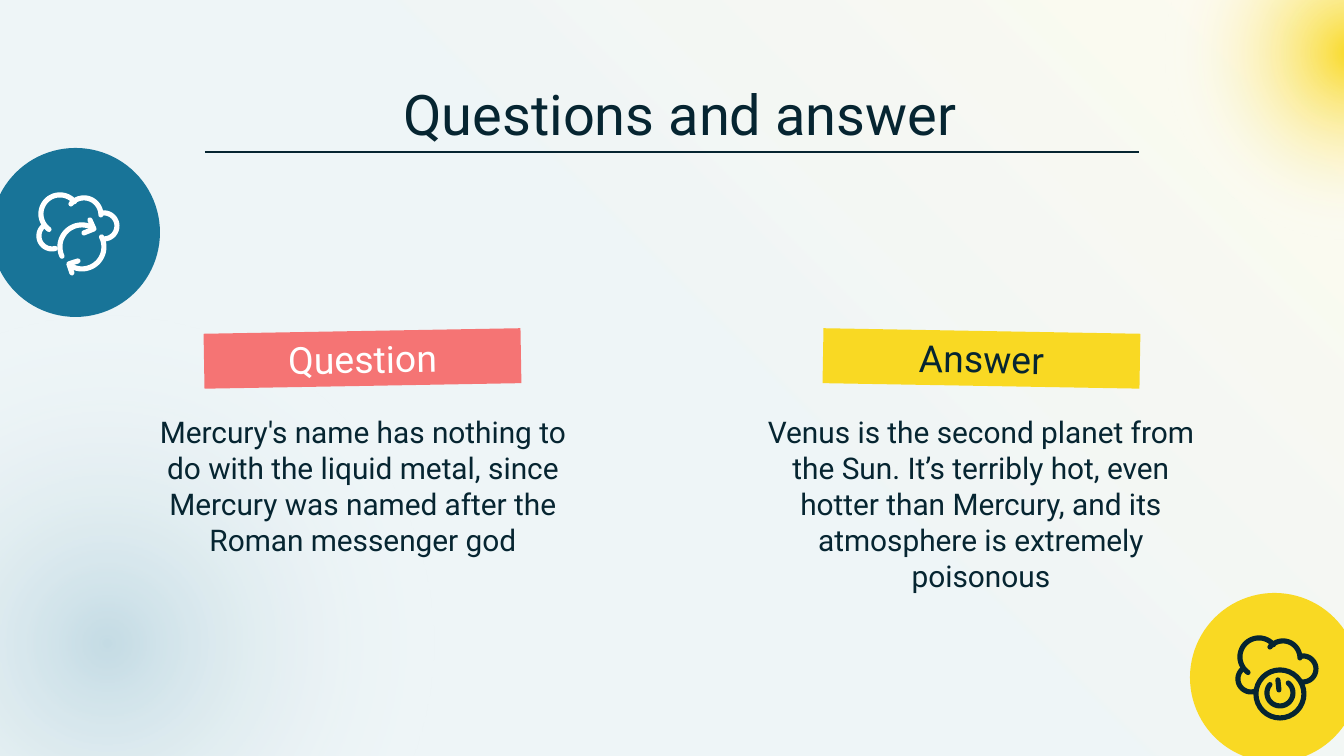
import math
from dataclasses import dataclass

from lxml import etree
from pptx import Presentation
from pptx.dml.color import RGBColor
from pptx.enum.shapes import MSO_CONNECTOR, MSO_SHAPE
from pptx.enum.text import MSO_ANCHOR, MSO_AUTO_SIZE, PP_ALIGN
from pptx.oxml import parse_xml
from pptx.oxml.ns import nsdecls, qn
from pptx.util import Emu, Pt

RECT, OVAL = MSO_SHAPE.RECTANGLE, MSO_SHAPE.OVAL
STRAIGHT = MSO_CONNECTOR.STRAIGHT
TOP, MIDDLE = MSO_ANCHOR.TOP, MSO_ANCHOR.MIDDLE
CENTER = PP_ALIGN.CENTER
NO_FIT = MSO_AUTO_SIZE.NONE

EMU_PER_PX = 914400 / 134.4
COMPARISON = 4
FONT = "Roboto"
INK, WHITE = "062531", "FFFFFF"
BLUE, YELLOW, CORAL = "187498", "F9D923", "F57474"
LINEAR = '<a:lin ang="18900000" scaled="0"/>'
RADIAL = ('<a:path path="circle"><a:fillToRect l="50000" t="50000" '
          'r="50000" b="50000"/></a:path>')


@dataclass
class Box:
    x: int
    y: int
    w: int
    h: int


@dataclass
class Stop:
    pos: int
    color: str
    alpha: int


@dataclass
class TextSpec:
    idx: int
    text: str
    box: Box
    size: int
    color: str = INK
    anchor: MSO_ANCHOR = TOP
    fill: str = ""
    rotation: int = 0


@dataclass
class Arc:
    cx: int
    cy: int
    r: int
    start: int
    end: int

    def points(self):
        steps = 32
        angles = [math.radians(self.start + (self.end - self.start) * i / steps)
                  for i in range(steps + 1)]
        return [(self.cx + self.r * math.cos(a), self.cy + self.r * math.sin(a))
                for a in angles]


@dataclass
class Badge:
    box: Box
    fill: str
    ink: str
    dx: int
    dy: int
    symbol: list


CLOUD = [
    Arc(52, 236, 13, 75, 230).points(),
    Arc(60, 214, 19, 125, 320).points(),
    Arc(84, 215, 17, 220, 360).points() + Arc(104, 226, 13, -100, 95).points(),
]
CYCLE = [
    Arc(82, 247, 22, 155, 300).points(),
    [(90, 220), (94, 229), (84, 233)],
    Arc(82, 247, 22, -27, 120).points(),
    [(72, 273), (69, 264), (78, 261)],
]
POWER = [
    Arc(81, 251, 24, 0, 360).points(),
    Arc(81, 250, 13, -50, 220).points(),
    [(79, 237), (80, 247)],
]
BADGES = [
    Badge(Box(-9, 148, 169, 169), BLUE, WHITE, 0, 0, CYCLE),
    Badge(Box(1190, 593, 169, 169), YELLOW, INK, 1199, 443, POWER),
]
BACKDROPS = [
    (RECT, Box(-5, -5, 1354, 767), LINEAR,
     [Stop(0, BLUE, 7), Stop(50, BLUE, 7), Stop(100, YELLOW, 7)]),
    (OVAL, Box(1087, -212, 530, 530), RADIAL,
     [Stop(0, YELLOW, 100), Stop(50, WHITE, 0), Stop(100, WHITE, 0)]),
    (OVAL, Box(-360, 176, 935, 935), RADIAL,
     [Stop(0, BLUE, 19), Stop(50, WHITE, 0), Stop(100, WHITE, 0)]),
]
TEXTS = [
    TextSpec(0, "Questions and answer", Box(113, 79, 1134, 69), 30, anchor=MIDDLE),
    TextSpec(2, "Mercury's name has nothing to do with the liquid metal, since "
             "Mercury was named after the Roman messenger god",
             Box(141, 414, 444, 149), 16),
    TextSpec(1, "Question", Box(204, 331, 317, 55), 20, WHITE, MIDDLE, CORAL, 359),
    TextSpec(4, "Venus is the second planet from the Sun. It’s terribly hot, even "
             "hotter than Mercury, and its atmosphere is extremely poisonous",
             Box(759, 414, 444, 149), 16),
    TextSpec(3, "Answer", Box(823, 331, 317, 55), 20, INK, MIDDLE, YELLOW, 1),
]


def px(n: float) -> Emu:
    return Emu(round(n * EMU_PER_PX))


def rgb(color: str) -> RGBColor:
    return RGBColor.from_string(color)


def add_plain_shape(slide, kind: MSO_SHAPE, box: Box):
    s = slide.shapes.add_shape(kind, px(box.x), px(box.y), px(box.w), px(box.h))
    s.shadow.inherit = False
    s.line.fill.background()
    return s


def add_backdrop(slide, kind: MSO_SHAPE, box: Box, shade: str, stops: list) -> None:
    s = add_plain_shape(slide, kind, box)
    gs = "".join(
        f'<a:gs pos="{st.pos * 1000}"><a:srgbClr val="{st.color}">'
        f'<a:alpha val="{st.alpha * 1000}"/></a:srgbClr></a:gs>' for st in stops)
    grad = parse_xml(f'<a:gradFill {nsdecls("a")} rotWithShape="1">'
                     f'<a:gsLst>{gs}</a:gsLst>{shade}</a:gradFill>')
    s._element.spPr.find(qn("a:prstGeom")).addnext(grad)


def fill_placeholder(slide, spec: TextSpec) -> None:
    sp = next(s for s in slide.placeholders if s.placeholder_format.idx == spec.idx)
    slide.shapes._spTree.append(sp._element)
    box = spec.box
    sp.left, sp.top, sp.width, sp.height = px(box.x), px(box.y), px(box.w), px(box.h)
    sp.rotation = spec.rotation
    if spec.fill:
        sp.fill.solid()
        sp.fill.fore_color.rgb = rgb(spec.fill)
    tf = sp.text_frame
    tf.margin_left = tf.margin_right = tf.margin_top = tf.margin_bottom = 0
    tf.word_wrap = True
    tf.auto_size = NO_FIT
    tf.vertical_anchor = spec.anchor
    p = tf.paragraphs[0]
    pPr = p._p.get_or_add_pPr()
    pPr.set("marL", "0")
    pPr.set("indent", "0")
    etree.SubElement(pPr, qn("a:buNone"))
    p.alignment = CENTER
    p.space_before = Pt(0)
    r = p.add_run()
    r.text = spec.text
    r.font.name = FONT
    r.font.size = Pt(spec.size)
    r.font.bold = False
    r.font.color.rgb = rgb(spec.color)


def add_rule(slide, x1: int, x2: int, y: int) -> None:
    line = slide.shapes.add_connector(STRAIGHT, px(x1), px(y), px(x2), px(y))
    line.line.color.rgb = rgb(INK)
    line.line.width = Pt(0.75)
    etree.SubElement(line._element.spPr, qn("a:effectLst"))


def add_badge(slide, badge: Badge) -> None:
    disc = add_plain_shape(slide, OVAL, badge.box)
    disc.fill.solid()
    disc.fill.fore_color.rgb = rgb(badge.fill)
    strokes = [[(px(x + badge.dx), px(y + badge.dy)) for x, y in stroke]
               for stroke in CLOUD + badge.symbol]
    builder = slide.shapes.build_freeform(*strokes[0][0])
    builder.add_line_segments(strokes[0][1:], close=False)
    for stroke in strokes[1:]:
        builder.move_to(*stroke[0])
        builder.add_line_segments(stroke[1:], close=False)
    icon = builder.convert_to_shape()
    icon.shadow.inherit = False
    icon.fill.background()
    icon.line.color.rgb = rgb(badge.ink)
    icon.line.width = Pt(2.75)
    ln = icon.line._get_or_add_ln()
    ln.set("cap", "rnd")
    etree.SubElement(ln, qn("a:round"))


def main() -> None:
    prs = Presentation()
    prs.slide_width, prs.slide_height = px(1344), px(756)
    slide = prs.slides.add_slide(prs.slide_layouts[COMPARISON])
    for backdrop in BACKDROPS:
        add_backdrop(slide, *backdrop)
    for spec in TEXTS:
        fill_placeholder(slide, spec)
    add_rule(slide, 205, 1139, 152)
    for badge in BADGES:
        add_badge(slide, badge)
    prs.save("out.pptx")


if __name__ == "__main__":
    main()
